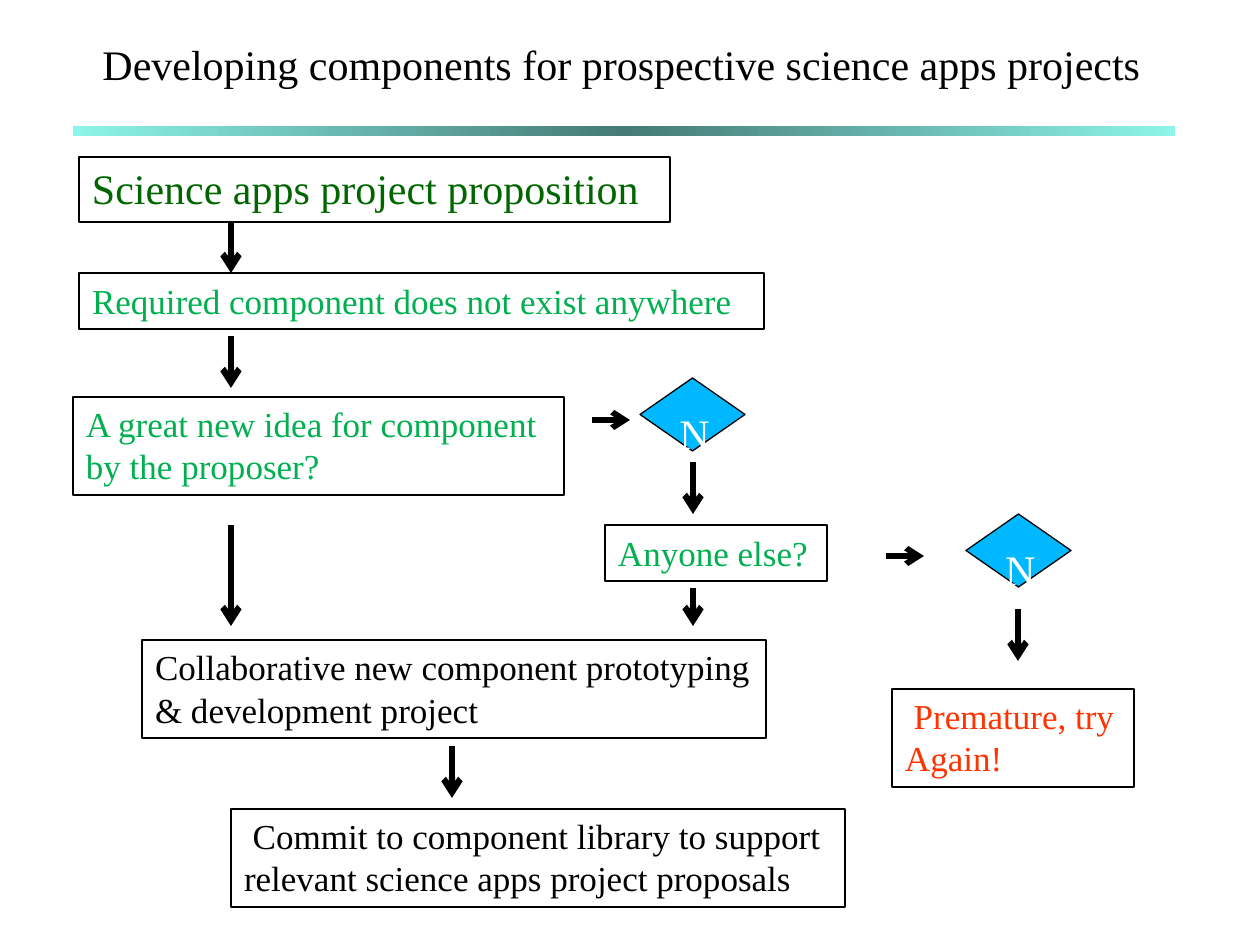
from copy import deepcopy

from pptx import Presentation
from pptx.dml.color import RGBColor
from pptx.enum.shapes import MSO_CONNECTOR as Connector, MSO_SHAPE as Shape
from pptx.enum.text import MSO_ANCHOR as Anchor, PP_ALIGN as Align
from pptx.oxml.ns import qn
from pptx.util import Pt

PX = 914400 / 126
FONT = "Times New Roman"
BLACK, WHITE, BLUE = "000000", "FFFFFF", "00B8FF"
DARK_GREEN, GREEN, RED = "006600", "00B050", "FF3300"
TEAL, DARK_TEAL = "8CF4EA", "467A75"

STEPS = [
    ((79, 157, 591, 65), 24, DARK_GREEN, ["Science apps project proposition"]),
    ((79, 273, 685, 56), 20, GREEN, ["Required component does not exist anywhere"]),
    ((73, 397, 491, 98), 20, GREEN, ["A great new idea for component", "by the proposer?"]),
    ((605, 525, 222, 56), 20, GREEN, ["Anyone else?"]),
    ((142, 640, 624, 98), 20, BLACK,
     ["Collaborative new component prototyping", "& development project"]),
    ((892, 689, 242, 98), 20, RED, [" Premature, try", "Again!"]),
    ((231, 809, 614, 98), 20, BLACK,
     [" Commit to component library to support", "relevant science apps project proposals"]),
]
DECISIONS = [(640, 378, 105, 73), (966, 514, 105, 73)]
DOWN_ARROWS = [(231, 221, 273), (231, 336, 388), (231, 525, 626), (693, 462, 514),
               (693, 588, 626), (1018, 609, 661), (452, 746, 798)]
RIGHT_ARROWS = [(592, 630, 420), (886, 924, 556)]


def emu(*lengths):
    """Turn px lengths into EMU."""
    return [round(length * PX) for length in lengths]


def color(hex_value):
    """Return the colour for a hex string."""
    return RGBColor.from_string(hex_value)


def apply(target, formats):
    """Set every attribute named in a dict of format values."""
    for name, value in formats.items():
        setattr(target, name, value)


def write(frame, lines, size, text_color, top=6):
    """Write left-aligned lines from the top of a text frame."""
    left_inset, top_inset = emu(13, top)
    apply(frame, {"text": "\n".join(lines), "word_wrap": True, "vertical_anchor": Anchor.TOP,
                  "margin_left": left_inset, "margin_right": left_inset,
                  "margin_top": top_inset, "margin_bottom": emu(6)[0]})
    for paragraph in frame.paragraphs:
        paragraph.alignment = Align.LEFT
        for run in paragraph.runs:
            apply(run.font, {"size": Pt(size), "name": FONT})
            run.font.color.rgb = color(text_color)


def outlined(slide, kind, box, width):
    """Add a black-outlined shape without shadow."""
    shape = slide.shapes.add_shape(kind, *emu(*box))
    shape.shadow.inherit = False
    shape.line.color.rgb = color(BLACK)
    shape.line.width = Pt(width)
    return shape


def add_heading(slide, box):
    """Place the title at the top of its box and the gradient rule at its foot."""
    left, top, width, height = box
    title = slide.shapes.title
    apply(title, dict(zip(("left", "top", "width", "height"),
                          emu(left + 6, top, width - 26, 64))))
    write(title.text_frame, [" Developing components for prospective science apps projects"], 24, BLACK)
    rule = slide.shapes.add_shape(Shape.RECTANGLE, *emu(left, top + height - 10, width, 10))
    rule.shadow.inherit = False
    rule.line.fill.background()
    rule.fill.gradient()
    rule.fill.gradient_angle = 0
    stop_list = rule._element.spPr.find(qn("a:gradFill")).find(qn("a:gsLst"))
    stop_list.insert(1, deepcopy(stop_list[0]))
    for stop, position, shade in zip(rule.fill.gradient_stops, (0, 0.5, 1), (TEAL, DARK_TEAL, TEAL)):
        stop.position = position
        stop.color.rgb = color(shade)


def add_step(slide, box, size, text_color, lines):
    """Place one outlined step with its text."""
    step = outlined(slide, Shape.RECTANGLE, box, 1.5)
    step.fill.background()
    write(step.text_frame, lines, size, text_color)


def add_decision(slide, box):
    """Place one diamond for the answer no."""
    decision = outlined(slide, Shape.FLOWCHART_DECISION, box, 0.75)
    decision.fill.solid()
    decision.fill.fore_color.rgb = color(BLUE)
    write(decision.text_frame, ["N"], 24, WHITE, top=11)


def add_arrow(slide, start, end, width):
    """Draw one arrow from start to end."""
    arrow = slide.shapes.add_connector(Connector.STRAIGHT, *emu(*start, *end))
    arrow.line.color.rgb = color(BLACK)
    arrow.line.width = Pt(width)
    properties = arrow._element.spPr
    line = properties.find(qn("a:ln"))
    line.append(line.makeelement(qn("a:tailEnd"), {"type": "arrow"}))
    properties.append(properties.makeelement(qn("a:effectLst"), {}))


def add_flow(slide):
    """Draw the steps, decisions and arrows."""
    for step in STEPS:
        add_step(slide, *step)
    for box in DECISIONS:
        add_decision(slide, box)
    for x, top, bottom in DOWN_ARROWS:
        add_arrow(slide, (x, top), (x, bottom), 3.5)
    for left, right, y in RIGHT_ARROWS:
        add_arrow(slide, (left, y), (right, y), 3.25)


def main():
    """Build and save the slide."""
    deck = Presentation()
    deck.slide_width, deck.slide_height = emu(1260, 945)
    slide = deck.slides.add_slide(deck.slide_layouts[5])
    add_heading(slide, (73, 32, 1102, 104))
    add_flow(slide)
    deck.save("out.pptx")


if __name__ == "__main__":
    main()
